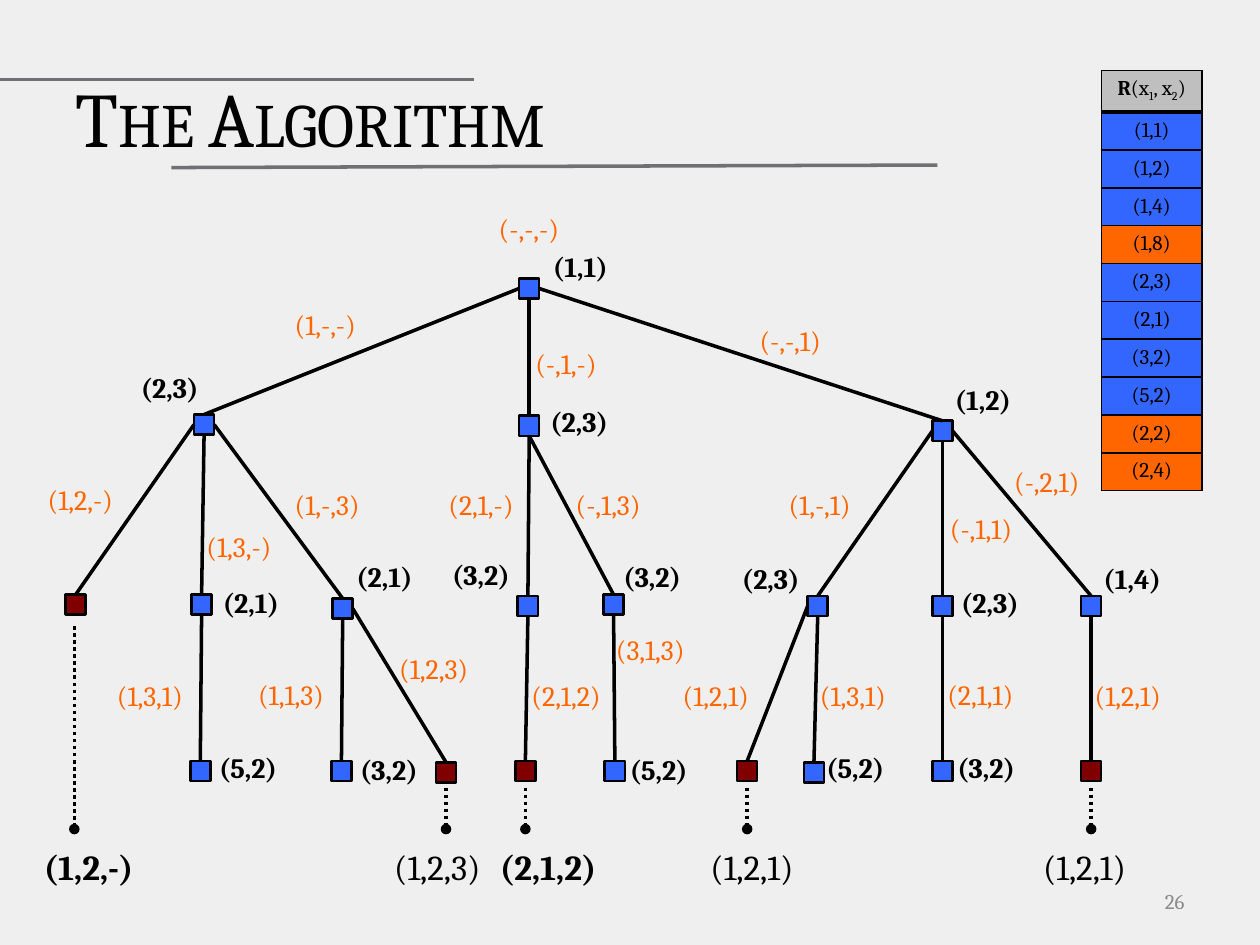
"""Build the slide that shows a search tree beside its relation table."""
import pptx
import pptx.dml.color
import pptx.enum.dml
import pptx.enum.shapes
import pptx.enum.text
import pptx.oxml
import pptx.oxml.ns
import pptx.util
from lxml import etree

RGB = pptx.dml.color.RGBColor
BLACK = RGB(0x00, 0x00, 0x00)
BLUE = RGB(0x33, 0x66, 0xFF)
RED = RGB(0x80, 0x00, 0x00)
ORANGE = RGB(0xFF, 0x66, 0x00)
RULE = RGB(0x6F, 0x6F, 0x74)
SILVER = RGB(0xBF, 0xBF, 0xBF)
GREY = RGB(0x8C, 0x8C, 0x8C)
PAPER = RGB(0xF0, 0xEF, 0xEF)
FONT = "Cambria"
PX = 9144
SIDE = 16
TOP, LEFT, FOOT, RIGHT = range(4)
ALIGN = pptx.enum.text.PP_ALIGN
qn = pptx.oxml.ns.qn

deck = pptx.Presentation()
deck.slide_width, deck.slide_height = 1000 * PX, 750 * PX
slide = deck.slides.add_slide(deck.slide_layouts[5])
slide.background.fill.solid()
slide.background.fill.fore_color.rgb = PAPER
shapes = slide.shapes


def write(text, x, y, wide, high, size, color, bold=False):
    box = shapes.add_textbox(x * PX, y * PX, wide * PX, high * PX)
    frame = box.text_frame
    frame.text = text
    frame.word_wrap = False
    frame.auto_size = pptx.enum.text.MSO_AUTO_SIZE.SHAPE_TO_FIT_TEXT
    font = frame.paragraphs[0].runs[0].font
    font.name, font.size, font.bold = FONT, pptx.util.Pt(size), bold
    font.color.rgb = color
    return frame


def draw(x1, y1, x2, y2, color=BLACK):
    kind = pptx.enum.shapes.MSO_CONNECTOR.STRAIGHT
    line = shapes.add_connector(kind, x1 * PX, y1 * PX, x2 * PX, y2 * PX)
    line.line.color.rgb = color
    line.line.width = pptx.util.Pt(2)
    etree.SubElement(line._element.spPr, qn("a:effectLst"))
    return line


title = shapes.title
title.left, title.top, title.width, title.height = 50 * PX, 30 * PX, 900 * PX, 125 * PX
title.text_frame.text = "The Algorithm"
title.text_frame.vertical_anchor = pptx.enum.text.MSO_ANCHOR.MIDDLE
head = title.text_frame.paragraphs[0]
head.alignment = ALIGN.LEFT
run = head.runs[0]
run.font.name, run.font.size = FONT, pptx.util.Pt(44)
run.font.color.rgb = BLACK
run._r.get_or_add_rPr().set("cap", "small")
draw(136, 133, 744, 131, RULE)
draw(0, 63, 376, 63, RULE)

page = write("26", 717, 695, 233, 40, 12, GREY)
page.auto_size = pptx.enum.text.MSO_AUTO_SIZE.NONE
page.word_wrap = True
page.vertical_anchor = pptx.enum.text.MSO_ANCHOR.MIDDLE
page.paragraphs[0].alignment = ALIGN.RIGHT

# name: x, y, fill, label, label x, label y
nodes = {
    "root": (412, 221, BLUE, "(1,1)", 429, 193),
    "a": (154, 329, BLUE, "(2,3)", 102, 289),
    "b": (412, 330, BLUE, "(2,3)", 427, 316),
    "c": (740, 334, BLUE, "(1,2)", 748, 299),
    "a1": (52, 472, RED, "", 0, 0),
    "a2": (152, 472, BLUE, "(2,1)", 167, 460),
    "a3": (264, 475, BLUE, "(2,1)", 273, 439),
    "b1": (411, 473, BLUE, "(3,2)", 349, 438),
    "b2": (479, 472, BLUE, "(3,2)", 485, 439),
    "c1": (641, 473, BLUE, "(2,3)", 579, 441),
    "c2": (740, 473, BLUE, "(2,3)", 753, 460),
    "c3": (858, 473, BLUE, "(1,4)", 866, 441),
    "a21": (151, 604, BLUE, "(5,2)", 164, 591),
    "a31": (263, 604, BLUE, "(3,2)", 276, 592),
    "a32": (346, 605, RED, "", 0, 0),
    "b11": (409, 604, RED, "", 0, 0),
    "b21": (480, 604, BLUE, "(5,2)", 490, 592),
    "c11": (585, 604, RED, "", 0, 0),
    "c12": (638, 605, BLUE, "(5,2)", 646, 591),
    "c21": (740, 604, BLUE, "(3,2)", 750, 591),
    "c31": (858, 604, RED, "", 0, 0),
}
boxes = {}
for name, (x, y, fill, text, tx, ty) in nodes.items():
    box = shapes.add_shape(
        pptx.enum.shapes.MSO_SHAPE.RECTANGLE, x * PX, y * PX, SIDE * PX, SIDE * PX)
    box.shadow.inherit = False
    box.fill.solid()
    box.fill.fore_color.rgb = fill
    box.line.color.rgb = BLACK
    box.line.width = pptx.util.Pt(1.5)
    boxes[name] = box
    if text:
        write(text, tx, ty, 70, 37, 16, BLACK, True)

edges = [
    ("root", LEFT, "a", "(1,-,-)", 224, 239),
    ("root", FOOT, "b", "(-,1,-)", 415, 270),
    ("root", RIGHT, "c", "(-,-,1)", 593, 252),
    ("a", LEFT, "a1", "(1,2,-)", 28, 378),
    ("a", FOOT, "a2", "(1,3,-)", 154, 415),
    ("a", RIGHT, "a3", "(1,-,3)", 224, 382),
    ("b", FOOT, "b1", "(2,1,-)", 346, 382),
    ("b", FOOT, "b2", "(-,1,3)", 447, 382),
    ("c", LEFT, "c1", "(1,-,1)", 616, 382),
    ("c", FOOT, "c2", "(-,1,1)", 744, 401),
    ("c", RIGHT, "c3", "(-,2,1)", 795, 364),
    ("a2", FOOT, "a21", "(1,3,1)", 83, 534),
    ("a3", FOOT, "a31", "(1,1,3)", 195, 533),
    ("a3", RIGHT, "a32", "(1,2,3)", 307, 512),
    ("b1", FOOT, "b11", "(2,1,2)", 412, 534),
    ("b2", FOOT, "b21", "(3,1,3)", 479, 497),
    ("c1", LEFT, "c11", "(1,2,1)", 532, 534),
    ("c1", FOOT, "c12", "(1,3,1)", 641, 534),
    ("c2", FOOT, "c21", "(2,1,1)", 742, 533),
    ("c3", FOOT, "c31", "(1,2,1)", 859, 534),
]
write("(-,-,-)", 386, 163, 69, 37, 16, ORANGE)
for start, side, end, text, x, y in edges:
    edge = draw(0, 0, 0, 0)
    edge.begin_connect(boxes[start], side)
    edge.end_connect(boxes[end], TOP)
    write(text, x, y, 84 - 5 * text.count("-"), 37, 16, ORANGE)

leaves = [
    (59, 497, "(1,2,-)", 25, 99, True),
    (354, 625, "(1,2,3)", 303, 100, False),
    (417, 625, "(2,1,2)", 387, 106, True),
    (593, 625, "(1,2,1)", 554, 100, False),
    (866, 625, "(1,2,1)", 818, 100, False),
]
for x, y, text, tx, wide, bold in leaves:
    stem = draw(x, y, x, 658)
    stem.line.dash_style = pptx.enum.dml.MSO_LINE.ROUND_DOT
    etree.SubElement(stem.line._get_or_add_ln(), qn("a:tailEnd"), type="oval")
    write(text, tx, 666, wide, 44, 20, BLACK, bold)

rows = ["", "(1,1)", "(1,2)", "(1,4)", "(1,8)", "(2,3)", "(2,1)",
        "(3,2)", "(5,2)", "(2,2)", "(2,4)"]
marked = {"(1,8)", "(2,2)", "(2,4)"}
parts = [("R", 0), ("(x", 0), ("1", -25000), (", x", 0), ("2", -25000), (")", 0)]
grid = shapes.add_table(len(rows), 1, 874 * PX, 56 * PX, 80 * PX, 333 * PX).table
grid.first_row = grid.horz_banding = False
for i, text in enumerate(rows):
    grid.rows[i].height = (30 if i else 33) * PX
    cell = grid.cell(i, 0)
    para = cell.text_frame.paragraphs[0]
    para.alignment = ALIGN.CENTER
    for word, base in ([(text, 0)] if i else parts):
        run = para.add_run()
        run.text = word
        run.font.name, run.font.size = FONT, pptx.util.Pt(12)
        run.font.bold = word == "R"
        run.font.color.rgb = BLACK
        if base:
            run._r.get_or_add_rPr().set("baseline", str(base))
    for tag in ("lnL", "lnR", "lnT", "lnB"):
        thick = (i, tag) in {(0, "lnB"), (1, "lnT")}
        rim = etree.SubElement(cell._tc.get_or_add_tcPr(), qn("a:" + tag),
                               w=str(pptx.util.Pt(3 if thick else 1)))
        ink = etree.SubElement(rim, qn("a:solidFill"))
        etree.SubElement(ink, qn("a:srgbClr"), val=str(BLACK))
    cell.fill.solid()
    cell.fill.fore_color.rgb = ORANGE if text in marked else BLUE if i else SILVER

deck.save("out.pptx")
